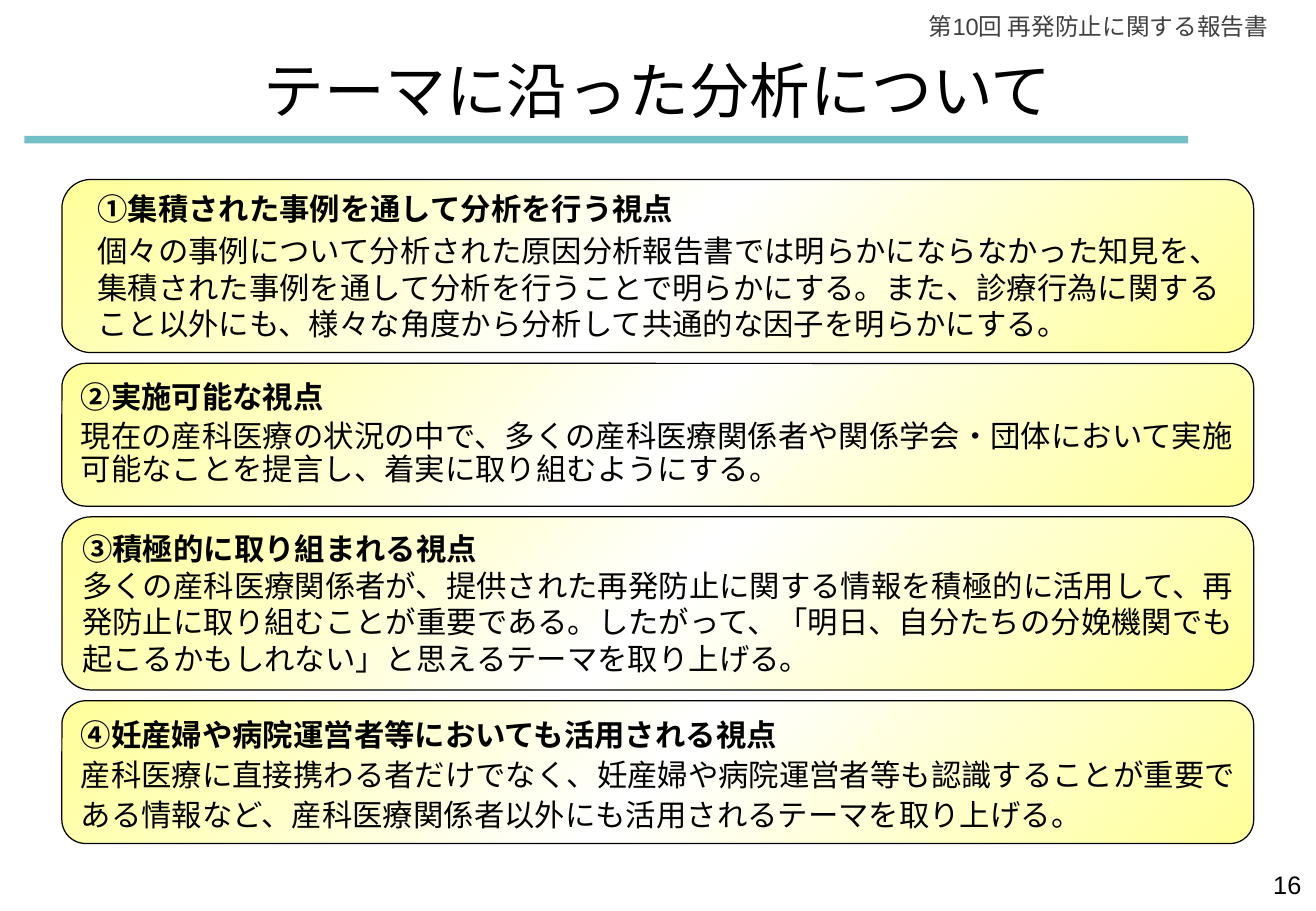
from copy import deepcopy

from pptx import Presentation
from pptx.dml.color import RGBColor
from pptx.enum.shapes import MSO_SHAPE
from pptx.enum.text import MSO_ANCHOR, PP_ALIGN
from pptx.oxml.ns import qn
from pptx.util import Pt

HUES = {"text": "000000", "head": "404040", "bar": "72BFC5",
        "edge": "FFFF99", "mid": "FFFFFF"}
SANS, ARIAL = "Noto Sans CJK JP", "Arial"
LEFT, TOP, WIDTH, GAP = 36.7, 106.4, 706.4, 6.4
TALL, SHORT = 102.6, 84.6

CARDS = [
    {"height": TALL, "font": SANS, "line": 1, "before": 3.6, "inset": 16,
     "head": "①集積された事例を通して分析を行う視点",
     "body": "個々の事例について分析された原因分析報告書では明らかにならなかった知見を、"
             "集積された事例を通して分析を行うことで明らかにする。また、診療行為に関する"
             "こと以外にも、様々な角度から分析して共通的な因子を明らかにする。"},
    {"height": SHORT, "font": SANS, "line": 0.9, "before": 3.6, "inset": 7.2,
     "head": "②実施可能な視点",
     "body": "現在の産科医療の状況の中で、多くの産科医療関係者や関係学会・団体において実施"
             "可能なことを提言し、着実に取り組むようにする。"},
    {"height": TALL, "font": SANS, "line": 1, "before": 0, "inset": 7.2,
     "head": "③積極的に取り組まれる視点",
     "body": "多くの産科医療関係者が、提供された再発防止に関する情報を積極的に活用して、"
             "再発防止に取り組むことが重要である。したがって、「明日、自分たちの分娩機関で"
             "も起こるかもしれない」と思えるテーマを取り上げる。"},
    {"height": SHORT, "font": ARIAL, "line": 1.1, "before": 0, "inset": 7.2,
     "head": "④妊産婦や病院運営者等においても活用される視点",
     "body": "産科医療に直接携わる者だけでなく、妊産婦や病院運営者等も認識することが重要で"
             "ある情報など、産科医療関係者以外にも活用されるテーマを取り上げる。"},
]


def color(name):
    """Return the named colour."""
    return RGBColor.from_string(HUES[name])


def apply(item, **form):
    """Set each format value on the item."""
    for key, value in form.items():
        setattr(item, key, value)


def write(para, text, hue="text", align=PP_ALIGN.LEFT, **form):
    """Fill a paragraph with formatted text."""
    para.text = text
    para.alignment = align
    apply(para.font, **form)
    para.font.color.rgb = color(hue)


def label(slide, box, text, **form):
    """Add a right-aligned line of text in the box."""
    frame = slide.shapes.add_textbox(*map(Pt, box)).text_frame
    frame.word_wrap = True
    write(frame.paragraphs[0], text, align=PP_ALIGN.RIGHT, name=ARIAL, **form)


def banner(slide, box):
    """Add the title and the bar below it."""
    left, top, width, height = box
    bar = slide.shapes.add_shape(
        MSO_SHAPE.RECTANGLE, Pt(left), Pt(top + height - 4.4), Pt(width), Pt(4.4))
    bar.shadow.inherit = False
    bar.fill.solid()
    bar.fill.fore_color.rgb = color("bar")
    bar.line.fill.background()
    title = slide.shapes.title
    apply(title, left=Pt(left + 134), top=Pt(top), width=Pt(483), height=Pt(50.4))
    apply(title.text_frame, word_wrap=False, vertical_anchor=MSO_ANCHOR.MIDDLE)
    write(title.text_frame.paragraphs[0], "テーマに沿った分析について",
          align=PP_ALIGN.CENTER, name=SANS, size=Pt(36))


def shade(shape):
    """Give the shape a diagonal three-stop gradient."""
    fill = shape.fill
    fill.gradient()
    fill.gradient_angle = 315
    stops = shape.element.spPr.find(".//" + qn("a:gsLst"))
    stops.append(deepcopy(stops[0]))
    for stop, place, hue in zip(fill.gradient_stops, (0, 0.5, 1),
                                ("edge", "mid", "edge")):
        stop.position = place
        stop.color.rgb = color(hue)


def card(slide, box, data):
    """Add a rounded card with a heading and its text."""
    shape = slide.shapes.add_shape(MSO_SHAPE.ROUNDED_RECTANGLE, *map(Pt, box))
    shape.shadow.inherit = False
    shade(shape)
    shape.line.color.rgb = color("text")
    shape.line.width = Pt(0.75)
    frame = shape.text_frame
    apply(frame, word_wrap=True, vertical_anchor=MSO_ANCHOR.MIDDLE,
          margin_left=Pt(data["inset"]))
    head, body = frame.paragraphs[0], frame.add_paragraph()
    for para, part in ((head, "head"), (body, "body")):
        write(para, data[part], name=data["font"], size=Pt(18), bold=para is head)
        para.line_spacing = data["line"]
    body.space_before = Pt(data["before"])


def stack(slide, box):
    """Stack the cards downwards with equal gaps."""
    left, top, width = box
    for data in CARDS:
        card(slide, (left, top, width, data["height"]), data)
        top += data["height"] + GAP


def main():
    """Build and save the slide."""
    deck = Presentation()
    apply(deck, slide_width=Pt(780), slide_height=Pt(540))
    slide = deck.slides.add_slide(deck.slide_layouts[5])
    banner(slide, (14.4, 27.4, 689.8, 57.6))
    label(slide, (531.4, 3.6, 227.5, 24.5), "第10回 再発防止に関する報告書",
          hue="head", size=Pt(14))
    stack(slide, (LEFT, TOP, WIDTH))
    label(slide, (596.2, 511.9, 182.2, 37.4), "16", size=Pt(15))
    deck.save("out.pptx")


if __name__ == "__main__":
    main()
